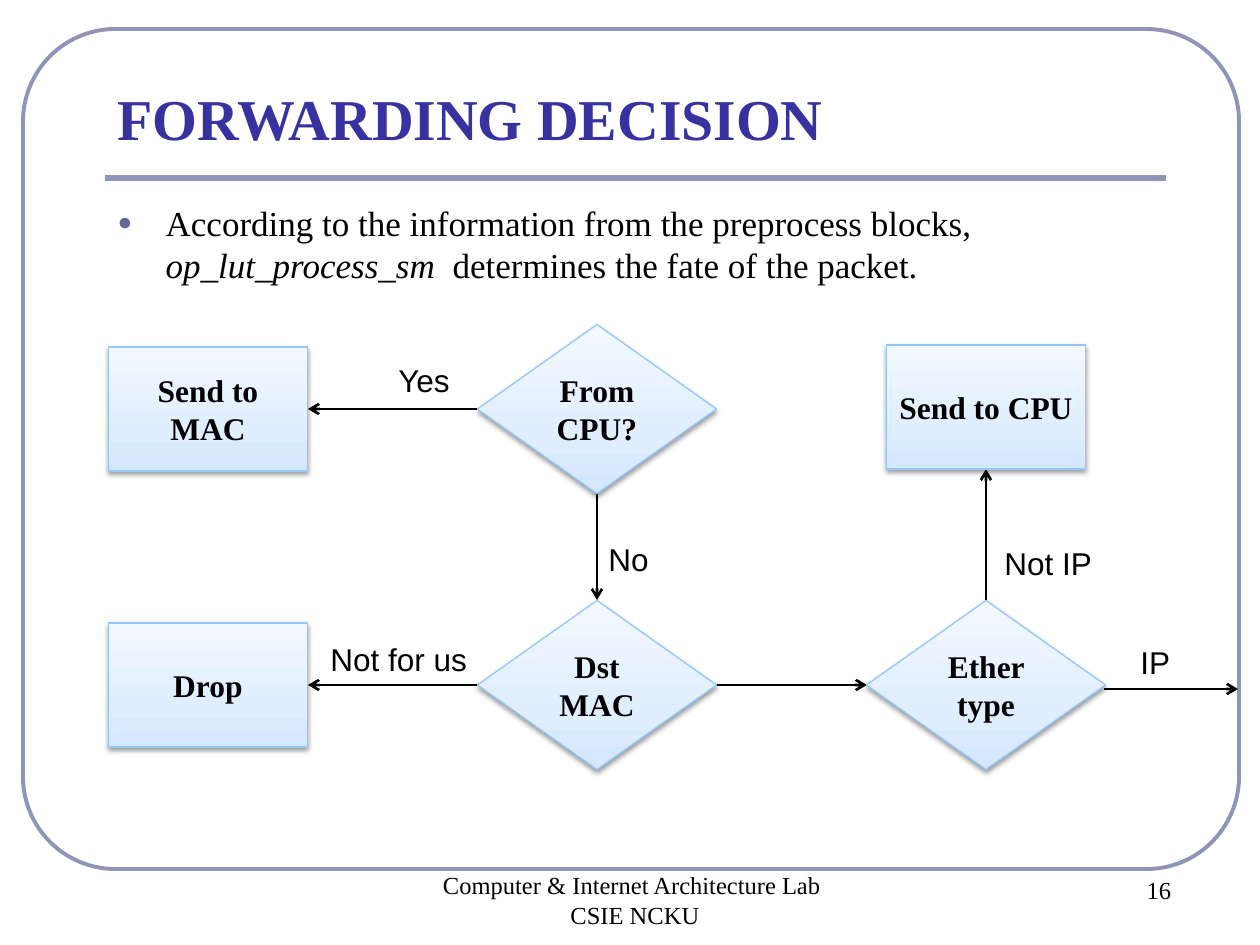
from lxml.etree import SubElement
from pptx import Presentation
from pptx.dml.color import RGBColor
from pptx.enum.shapes import MSO_CONNECTOR as Connector, MSO_SHAPE as Shape
from pptx.enum.text import MSO_ANCHOR as Anchor, PP_ALIGN as Align
from pptx.oxml.ns import qn
from pptx.util import Emu, Pt

COLORS = {
    "frame": "9094B8", "title": "3732A0", "bullet": "666699", "text": "000000",
    "node_line": "93C8FC", "bottom": "D4E7FF", "middle": "E0EEFF", "top": "F3F8FF",
}
SERIF, SANS = "Times New Roman", "Arial"
PIXELS_PER_INCH = 126


def px(*lengths):
    return [Emu(round(length * 914400 / PIXELS_PER_INCH)) for length in lengths]


def add_run(paragraph, text, size, name=SERIF, color="text", bold=False, italic=False):
    run = paragraph.add_run()
    run.text = text
    font = run.font
    font.size, font.name, font.bold, font.italic = Pt(size), name, bold, italic
    font.color.rgb = RGBColor.from_string(COLORS[color])


presentation = Presentation()
presentation.slide_width, presentation.slide_height = px(1260, 945)
slide = presentation.slides.add_slide(presentation.slide_layouts[1])
shapes = slide.shapes

title, body = slide.placeholders
title.left, title.top, title.width, title.height = px(105, 76, 1061, 82)
title.text_frame.vertical_anchor = Anchor.BOTTOM
paragraph = title.text_frame.paragraphs[0]
paragraph.alignment = Align.LEFT
add_run(paragraph, "FORWARDING DECISION", 33, color="title", bold=True)

body.left, body.top, body.width, body.height = px(105, 195, 1061, 605)
paragraph = body.text_frame.paragraphs[0]
paragraph.space_before = Pt(4)
add_run(paragraph, "According to the information from the preprocess blocks, ", 20)
add_run(paragraph, "op_lut_process_sm ", 20, italic=True)
add_run(paragraph, " determines the fate of the packet.", 20)
properties = paragraph._p.get_or_add_pPr()
indent = px(48)[0]
properties.set("marL", str(indent))
properties.set("indent", str(-indent))
bullet_color = SubElement(properties, qn("a:buClr"))
SubElement(bullet_color, qn("a:srgbClr"), val=COLORS["bullet"])
SubElement(properties, qn("a:buSzPct"), val="70000")
SubElement(properties, qn("a:buFont"), typeface=SANS)
SubElement(properties, qn("a:buChar"), char="●")

frame = shapes.add_shape(Shape.ROUNDED_RECTANGLE, *px(23, 29, 1216, 840))
frame.adjustments[0] = 0.11
frame.shadow.inherit = False
frame.fill.background()
frame.line.color.rgb = RGBColor.from_string(COLORS["frame"])
frame.line.width = Pt(2.25)

footers = [
    ((362, 864, 546, 63), ["Computer & Internet Architecture Lab ", "CSIE NCKU"]),
    ((1091, 869, 136, 63), ["16"]),
]
for box, lines in footers:
    text_frame = shapes.add_textbox(*px(*box)).text_frame
    text_frame.word_wrap = True
    for index, line in enumerate(lines):
        paragraph = text_frame.add_paragraph() if index else text_frame.paragraphs[0]
        paragraph.alignment = Align.CENTER
        add_run(paragraph, line, 14)

left, center, right = 208, 597, 986
upper, lower = 409, 685
SIZES = {Shape.DIAMOND: (239, 169), Shape.RECTANGLE: (199, 124)}

lines = [
    ((105, 178, 1166, 178), "frame", 3, False),
    ((478, upper, 308, upper), "text", 1.5, True),
    ((center, 494, center, 600), "text", 1.5, True),
    ((478, lower, 308, lower), "text", 1.5, True),
    ((716, lower, 867, lower), "text", 1.5, True),
    ((right, 600, right, 469), "text", 1.5, True),
    ((1104, 689, 1238, 689), "text", 1.5, True),
]
for ends, color, width, has_arrow in lines:
    connector = shapes.add_connector(Connector.STRAIGHT, *px(*ends))
    connector.line.color.rgb = RGBColor.from_string(COLORS[color])
    connector.line.width = Pt(width)
    if has_arrow:
        SubElement(connector.line._get_or_add_ln(), qn("a:tailEnd"), type="arrow")
    SubElement(connector._element.spPr, qn("a:effectLst"))

labels = [
    ("Yes", 386, 355, 77),
    ("No", 596, 534, 66),
    ("Not for us", 318, 634, 164),
    ("Not IP", 992, 538, 113),
    ("IP", 1128, 637, 55),
]
for text, x, y, width in labels:
    text_frame = shapes.add_textbox(*px(x, y, width, 50)).text_frame
    text_frame.word_wrap = False
    add_run(text_frame.paragraphs[0], text, 18, SANS)

nodes = [
    ("From CPU?", Shape.DIAMOND, center, upper),
    ("Send to MAC", Shape.RECTANGLE, left, upper),
    ("Dst MAC", Shape.DIAMOND, center, lower),
    ("Drop", Shape.RECTANGLE, left, lower),
    ("Ether type", Shape.DIAMOND, right, lower),
    ("Send to CPU", Shape.RECTANGLE, right, upper - 2),
]
for text, kind, x, y in nodes:
    width, height = SIZES[kind]
    node = shapes.add_shape(kind, *px(x - width / 2, y - height / 2, width, height))
    node.line.color.rgb = RGBColor.from_string(COLORS["node_line"])
    node.line.width = Pt(0.75)

    node.fill.gradient()
    node.fill.gradient_angle = 90
    stops = node._element.spPr.find(qn("a:gradFill")).find(qn("a:gsLst"))
    for stop in list(stops):
        stops.remove(stop)
    for position, color in ((0, "bottom"), (35, "middle"), (100, "top")):
        stop = SubElement(stops, qn("a:gs"), pos=str(position * 1000))
        SubElement(stop, qn("a:srgbClr"), val=COLORS[color])

    node.shadow.inherit = False
    effects = node._element.spPr.find(qn("a:effectLst"))
    shadow = SubElement(effects, qn("a:outerShdw"), blurRad=str(Pt(3.1)),
                        dist=str(Pt(1.6)), dir="5400000", rotWithShape="0")
    shadow_color = SubElement(shadow, qn("a:srgbClr"), val=COLORS["text"])
    SubElement(shadow_color, qn("a:alpha"), val="38000")

    text_frame = node.text_frame
    text_frame.word_wrap = True
    text_frame.vertical_anchor = Anchor.MIDDLE
    text_frame.margin_left, text_frame.margin_right = px(10, 10)
    paragraph = text_frame.paragraphs[0]
    paragraph.alignment = Align.CENTER
    add_run(paragraph, text, 18, bold=True)

presentation.save("out.pptx")
